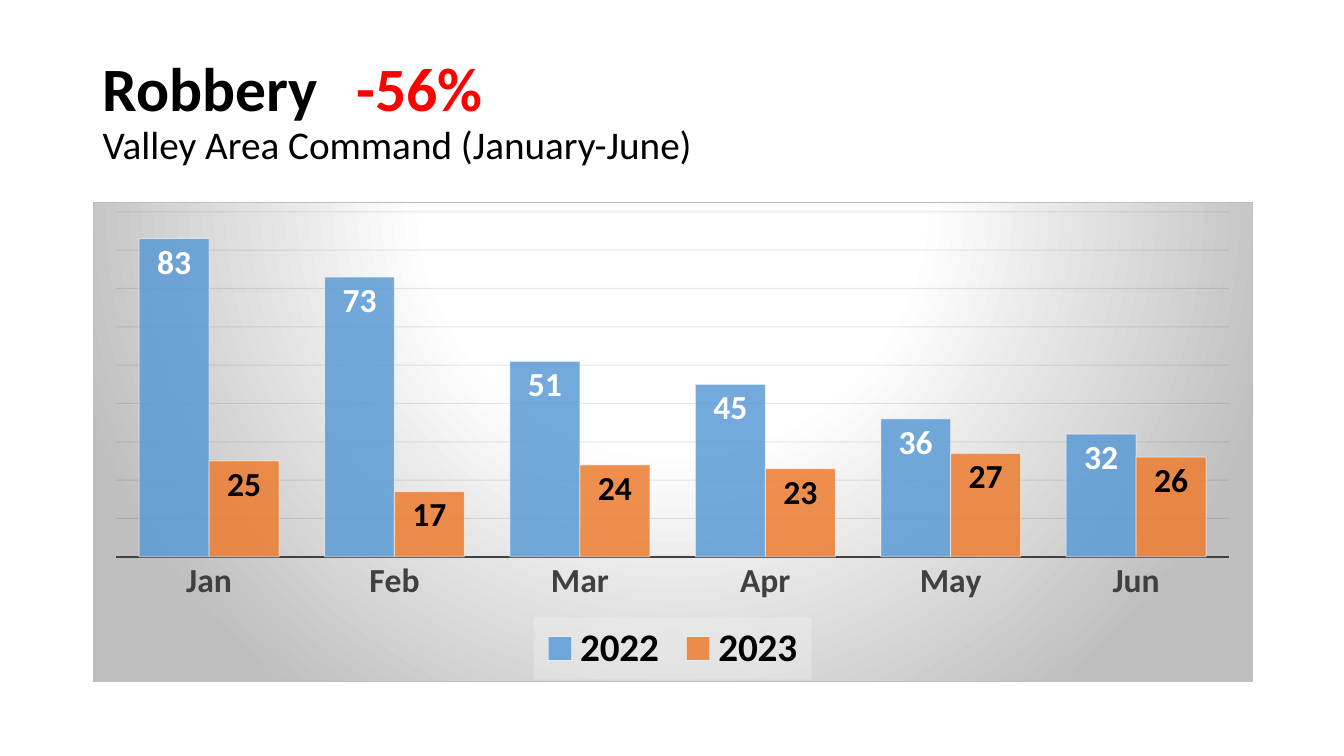
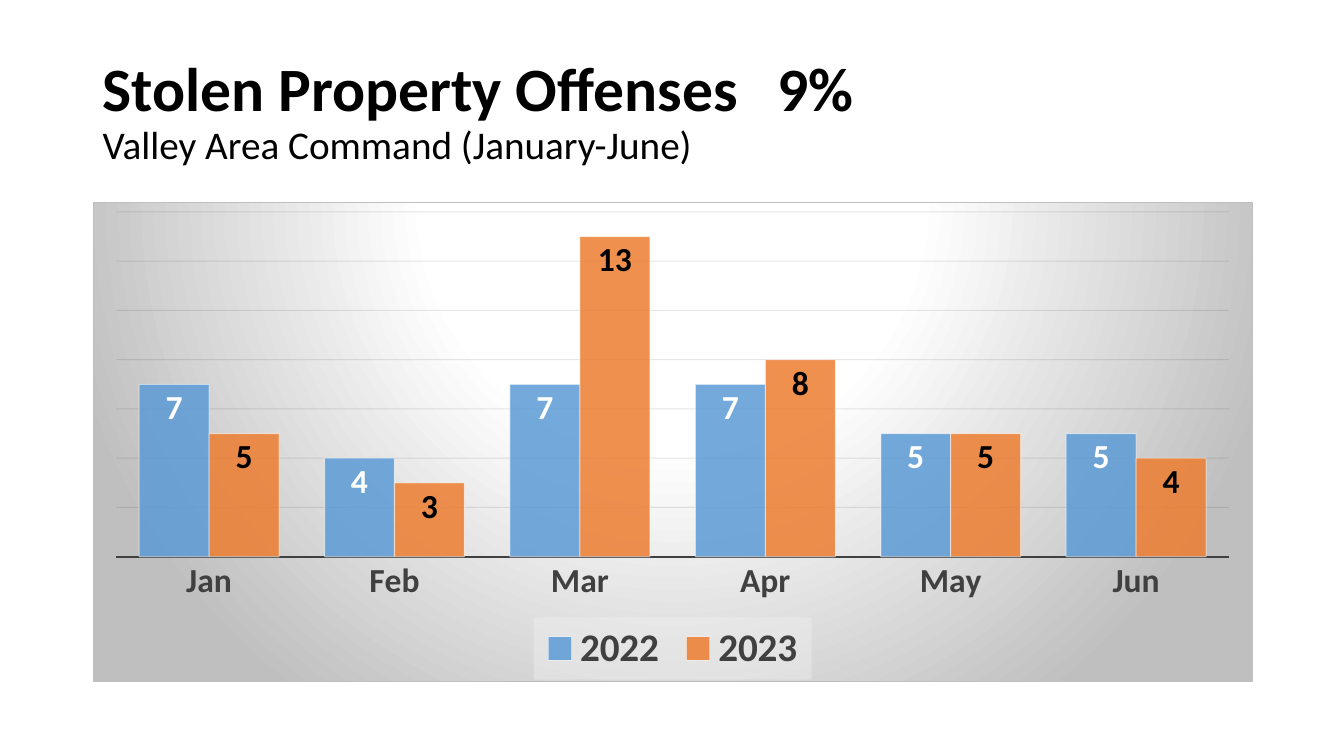
from pptx import Presentation
from pptx.chart.data import CategoryChartData as ChartData
from pptx.dml.color import RGBColor as RGB
from pptx.enum.chart import XL_CHART_TYPE as Kind, XL_LABEL_POSITION as Spot
from pptx.enum.chart import XL_LEGEND_POSITION as Side, XL_TICK_MARK as Tick
from pptx.enum.text import MSO_ANCHOR as Anchor
from pptx.oxml import parse_xml
from pptx.oxml.ns import nsdecls, qn
from pptx.util import Inches, Pt

WIDE, HIGH = 13.33, 7.5
FONT = "Calibri"
COLOR = {"black": "000000", "white": "FFFFFF", "red": "FF0000",
         "blue": "5B9BD5", "orange": "ED7D31", "slate": "404040",
         "grid": "0D0D0D", "rim": "BFBFBF", "pale": "F2F2F2"}

# Boxes: left, top, width, height as shares of the slide
HEAD = (0.069, 0.053, 0.863, 0.193)
BODY = (0.069, 0.267, 0.863, 0.635)
# Boxes as shares of the chart
PLOT = (0.02, 0.02, 0.96, 0.72)
KEY = (0.38, 0.87, 0.24, 0.13)

HEADING = {"size": Pt(44), "bold": True}
SUBHEAD = {"size": Pt(28), "bold": False}
BASE = {"size": Pt(10)}
LABEL = {"size": Pt(24), "bold": True}
LEGEND = {"size": Pt(28), "bold": True}

MONTHS = ["Jan", "Feb", "Mar", "Apr", "May", "Jun"]
AREA = "Valley Area Command (January-June)"
YEARS = [("2022", "blue", "white"), ("2023", "orange", "black")]

# The stop is the distance in inches from title start to the percentage
PAGES = [
    {"name": "Robbery", "rate": "-56%", "tint": "red", "stop": 2.52,
     "top": 90, "step": 10, "key": "black",
     "rows": [(83, 73, 51, 45, 36, 32), (25, 17, 24, 23, 27, 26)]},
    {"name": "Stolen Property Offenses", "rate": "9%", "tint": "black",
     "stop": 6.69, "top": 14, "step": 2, "key": "slate",
     "rows": [(7, 4, 7, 7, 5, 5), (5, 3, 13, 8, 5, 4)]},
]


def place(box):
    """Turn shares of the slide into lengths."""
    return [Inches(part * full) for part, full in zip(box, (WIDE, HIGH) * 2)]


def style(font, look, color):
    for key, val in {"name": FONT, **look}.items():
        setattr(font, key, val)
    font.color.rgb = RGB.from_string(COLOR[color])


def stroke(line, color, width):
    line.color.rgb = RGB.from_string(COLOR[color])
    line.width = Pt(width)


def fade(node, share):
    """Set the opacity, in percent, of every colour in a node."""
    for color in node.iter(qn("a:srgbClr")):
        color.append(parse_xml(
            f'<a:alpha {nsdecls("a")} val="{share * 1000}"/>'))


def layout(box, inner=False):
    """Build a fixed position inside the chart."""
    target = '<c:layoutTarget val="inner"/>' if inner else ""
    modes = "".join(f'<c:{k}Mode val="edge"/>' for k in "xy")
    sizes = "".join(f'<c:{k} val="{v}"/>' for k, v in zip("xywh", box))
    return parse_xml(f'<c:layout {nsdecls("c")}><c:manualLayout>'
                     f'{target}{modes}{sizes}</c:manualLayout></c:layout>')


def backdrop():
    """Build the radial gradient and border of the chart."""
    stops = "".join(
        f'<a:gs pos="{pos * 1000}"><a:srgbClr val="{COLOR[name]}"/></a:gs>'
        for pos, name in ((0, "white"), (39, "white"), (100, "rim")))
    return parse_xml(
        f'<c:spPr {nsdecls("c", "a")}><a:gradFill><a:gsLst>{stops}</a:gsLst>'
        '<a:path path="circle"><a:fillToRect l="50000" t="-80000" r="50000" '
        f'b="180000"/></a:path></a:gradFill><a:ln w="{Pt(0.75)}"><a:solidFill>'
        f'<a:srgbClr val="{COLOR["rim"]}"/></a:solidFill></a:ln></c:spPr>')


def add_head(slide, box, page):
    frame = slide.shapes.add_textbox(*place(box)).text_frame
    frame.word_wrap = True
    frame.vertical_anchor = Anchor.MIDDLE
    para = frame.paragraphs[0]
    para.line_spacing = 0.9

    def add(text, look, color):
        run = para.add_run()
        run.text = text
        style(run.font, look, color)

    add(page["name"] + "\t", HEADING, "black")
    add(page["rate"], HEADING, page["tint"])
    para.add_line_break()
    add(AREA, SUBHEAD, "black")
    # Tab stop for the percentage
    para.runs[0].font.bold = True
    props = frame.paragraphs[0]._p.get_or_add_pPr()
    props.append(parse_xml(
        f'<a:tabLst {nsdecls("a")}><a:tab pos="{Inches(page["stop"])}" '
        'algn="l"/></a:tabLst>'))


def set_axes(chart, page):
    months, scale = chart.category_axis, chart.value_axis
    months.major_tick_mark = months.minor_tick_mark = Tick.NONE
    style(months.tick_labels.font, LABEL, "slate")
    stroke(months.format.line, "slate", 1.5)
    limits = {"minimum_scale": 0, "maximum_scale": page["top"],
              "major_unit": page["step"], "visible": False,
              "has_major_gridlines": True}
    for key, val in limits.items():
        setattr(scale, key, val)
    stroke(scale.major_gridlines.format.line, "grid", 0.75)
    fade(chart.element.find(".//" + qn("c:majorGridlines")), 10)


def set_bars(chart):
    plot = chart.plots[0]
    plot.gap_width, plot.overlap = 65, 0
    plot.vary_by_categories = False
    nodes = chart.element.iter(qn("c:ser"))
    for bars, node, (_, color, ink) in zip(plot.series, nodes, YEARS):
        bars.invert_if_negative = False
        bars.format.fill.solid()
        bars.format.fill.fore_color.rgb = RGB.from_string(COLOR[color])
        stroke(bars.format.line, "white", 0.75)
        look = node.find(qn("c:spPr"))
        fade(look.find(qn("a:solidFill")), 85)
        fade(look.find(qn("a:ln")), 50)
        labels = bars.data_labels
        labels.show_value = True
        labels.position = Spot.INSIDE_END
        style(labels.font, LABEL, ink)


def set_key(chart, color):
    chart.has_legend = True
    chart.legend.position = Side.BOTTOM
    chart.legend.include_in_layout = False
    style(chart.legend.font, LEGEND, color)
    node = chart.element.find(".//" + qn("c:legend"))
    for old in node.findall(qn("c:layout")):
        node.remove(old)
    node.find(qn("c:legendPos")).addnext(layout(KEY))
    panel = parse_xml(
        f'<c:spPr {nsdecls("c", "a")}><a:solidFill><a:srgbClr '
        f'val="{COLOR["pale"]}"/></a:solidFill></c:spPr>')
    fade(panel, 39)
    node.find(qn("c:overlay")).addnext(panel)


def add_bars(slide, box, page):
    data = ChartData()
    data.categories = MONTHS
    for (year, _, _), row in zip(YEARS, page["rows"]):
        data.add_series(year, row)
    chart = slide.shapes.add_chart(
        Kind.COLUMN_CLUSTERED, *place(box), data).chart
    chart.has_title = False
    style(chart.font, BASE, "black")
    set_axes(chart, page)
    set_bars(chart)
    set_key(chart, page["key"])
    # Plot position and chart background
    area = chart.element.find(".//" + qn("c:plotArea"))
    for old in area.findall(qn("c:layout")):
        area.remove(old)
    area.insert(0, layout(PLOT, inner=True))
    chart.element.find(qn("c:chart")).addnext(backdrop())


def main():
    deck = Presentation()
    deck.slide_width, deck.slide_height = Inches(WIDE), Inches(HIGH)
    for page in PAGES:
        slide = deck.slides.add_slide(deck.slide_layouts[6])
        add_head(slide, HEAD, page)
        add_bars(slide, BODY, page)
    deck.save("out.pptx")


if __name__ == "__main__":
    main()
